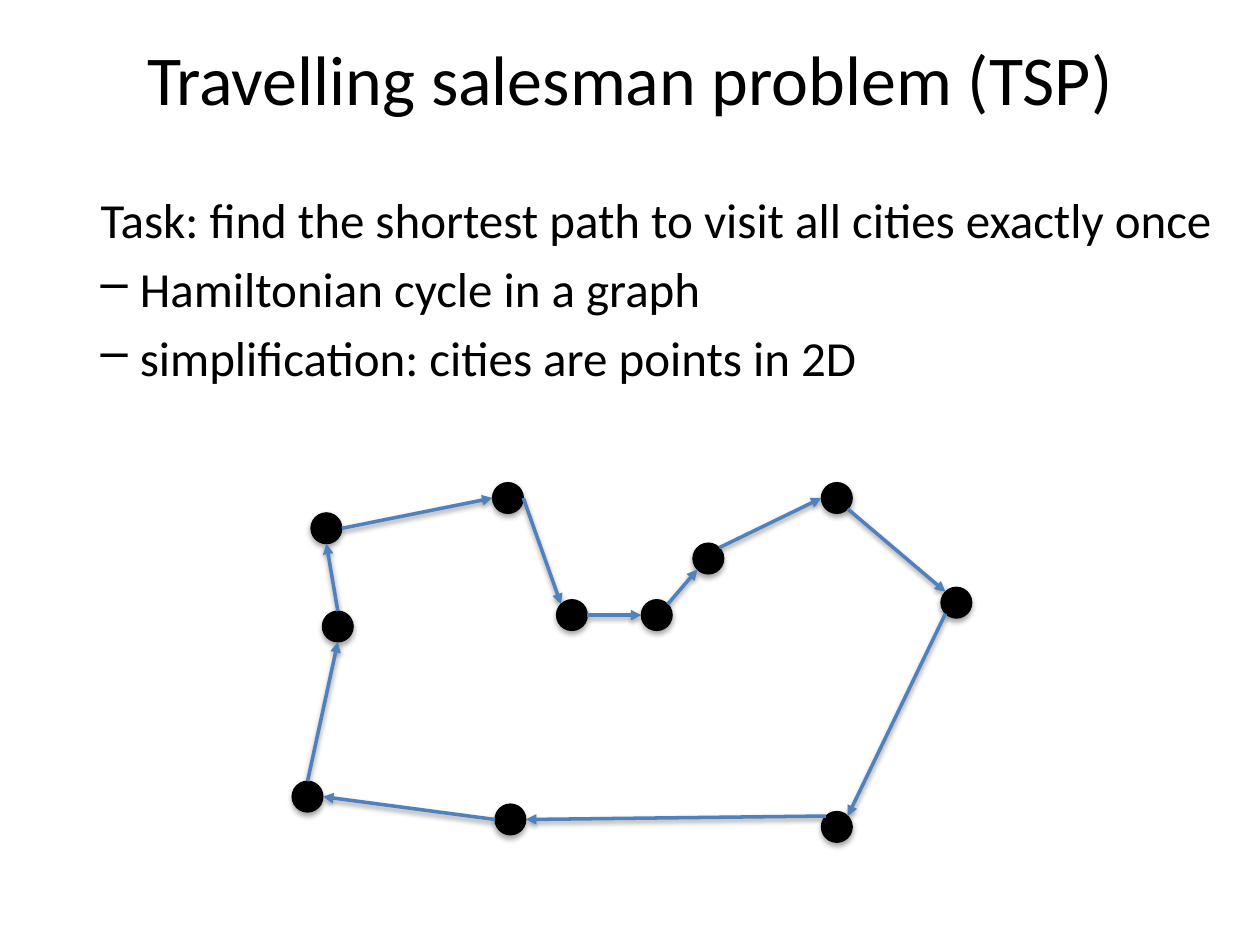
from dataclasses import dataclass
from math import sqrt

from pptx import Presentation
from pptx import util as u
from pptx.dml.color import RGBColor
from pptx.enum import shapes, text
from pptx.oxml import parse_xml
from pptx.oxml.ns import nsdecls, qn


@dataclass(frozen=True)
class Theme:
    font: str = "Calibri"
    ink: RGBColor = RGBColor(0, 0, 0)
    route: RGBColor = RGBColor(0x4F, 0x81, 0xBD)
    title_size: int = 40
    body_size: int = 28
    space_before: float = 5.6
    city_line: float = 0.75
    route_line: float = 2


THEME = Theme()
CITY_SIZE = 0.62

# Directions from a city's centre to the places where arrows attach
DIAGONAL = sqrt(0.5)
SITES = {
    "top": (0, -1), "bottom": (0, 1), "left": (-1, 0), "right": (1, 0),
    "top left": (-DIAGONAL, -DIAGONAL), "top right": (DIAGONAL, -DIAGONAL),
    "bottom left": (-DIAGONAL, DIAGONAL), "bottom right": (DIAGONAL, DIAGONAL),
}

# Cities in tour order: left, top, arrival site, departure site
TOUR = [
    (0, 6.02, "right", "top"),
    (0.61, 2.59, "bottom", "top"),
    (0.38, 0.61, "bottom", "right"),
    (4.04, 0, "left", "right"),
    (5.33, 2.36, "top left", "right"),
    (7.04, 2.36, "left", "top right"),
    (8.08, 1.22, "bottom left", "top right"),
    (10.67, 0, "left", "bottom right"),
    (13.08, 2.11, "top left", "bottom left"),
    (10.67, 6.63, "top right", "top left"),
    (4.09, 6.48, "right", "left"),
]

TASK = [
    ("Task: find the shortest path to visit all cities exactly once", False),
    ("Hamiltonian cycle in a graph", True),
    ("simplification: cities are points in 2D", True),
]


def apply_format(target, values):
    for name, value in values.items():
        setattr(target, name, value)


def add_span(para, wording, size):
    span = para.add_run()
    span.text = wording
    apply_format(span.font, {"name": THEME.font, "size": u.Pt(size)})
    span.font.color.rgb = THEME.ink


def add_shadow(item, opacity, distance):
    """Soft shadow straight below; opacity in percent, distance in points."""
    item._element.spPr.append(parse_xml(
        f'<a:effectLst {nsdecls("a")}>'
        f'<a:outerShdw blurRad="{u.Pt(3.1)}" dist="{u.Pt(distance)}" '
        f'dir="5400000" rotWithShape="0"><a:srgbClr val="{THEME.ink}">'
        f'<a:alpha val="{opacity * 1000}"/></a:srgbClr>'
        f'</a:outerShdw></a:effectLst>'))


def set_bullet(para, bulleted):
    layout = para._p.get_or_add_pPr()
    layout.set("marL", str(u.Cm(2.06 if bulleted else 1.27)))
    layout.set("indent", str(u.Cm(-0.79 if bulleted else 0)))
    mark = '<a:buChar {} char="–"/>' if bulleted else "<a:buNone {}/>"
    layout.append(parse_xml(mark.format(nsdecls("a"))))


def place_title(page, left, top, width, height):
    title = page.shapes.title
    apply_format(title, {"left": u.Cm(left), "top": u.Cm(top),
                         "width": u.Cm(width), "height": u.Cm(height)})
    frame = title.text_frame
    apply_format(frame, {"word_wrap": True,
                         "auto_size": text.MSO_AUTO_SIZE.NONE,
                         "vertical_anchor": text.MSO_ANCHOR.MIDDLE})
    para = frame.paragraphs[0]
    para.alignment = text.PP_ALIGN.CENTER
    add_span(para, "Travelling salesman problem (TSP)", THEME.title_size)


def place_task(page, left, top, width, height):
    box = page.shapes.add_textbox(*map(u.Cm, (left, top, width, height)))
    frame = box.text_frame
    apply_format(frame, {"word_wrap": True, "margin_top": u.Cm(1.37),
                         "vertical_anchor": text.MSO_ANCHOR.TOP})
    for number, (wording, bulleted) in enumerate(TASK):
        para = frame.add_paragraph() if number else frame.paragraphs[0]
        para.space_before = u.Pt(THEME.space_before if number else 0)
        set_bullet(para, bulleted)
        add_span(para, wording, THEME.body_size)


def add_city(group, left, top):
    city = group.shapes.add_shape(
        shapes.MSO_SHAPE.OVAL,
        *map(u.Cm, (left, top, CITY_SIZE, CITY_SIZE)))
    city.fill.solid()
    city.fill.fore_color.rgb = THEME.ink
    city.line.color.rgb = THEME.ink
    city.line.width = u.Pt(THEME.city_line)
    add_shadow(city, 35, 1.8)


def add_route(group, start, end):
    route = group.shapes.add_connector(
        shapes.MSO_CONNECTOR.STRAIGHT, *map(u.Cm, (*start, *end)))
    route.line.color.rgb = THEME.route
    route.line.width = u.Pt(THEME.route_line)
    outline = route._element.spPr.find(qn("a:ln"))
    outline.append(parse_xml(f'<a:tailEnd {nsdecls("a")} type="triangle"/>'))
    add_shadow(route, 38, 1.6)


def place_tour(page, left, top):
    def site_point(city_left, city_top, site):
        radius = CITY_SIZE / 2
        across, down = SITES[site]
        return (left + city_left + radius * (1 + across),
                top + city_top + radius * (1 + down))

    group = page.shapes.add_group_shape()
    for city_left, city_top, _, _ in TOUR:
        add_city(group, left + city_left, top + city_top)

    # Each city leads to the next, and the last one back to the first
    for here, following in zip(TOUR, TOUR[1:] + TOUR[:1]):
        add_route(group, site_point(here[0], here[1], here[3]),
                  site_point(following[0], following[1], following[2]))


def main():
    deck = Presentation()
    deck.slide_width, deck.slide_height = u.Cm(25.4), u.Cm(19.05)
    page = deck.slides.add_slide(deck.slide_layouts.get_by_name("Title Only"))
    place_tour(page, 5.89, 9.73)
    place_title(page, 1.27, 0.66, 22.86, 1.8)
    place_task(page, 0.51, 2.46, 24.89, 15.65)
    deck.save("out.pptx")


if __name__ == "__main__":
    main()
